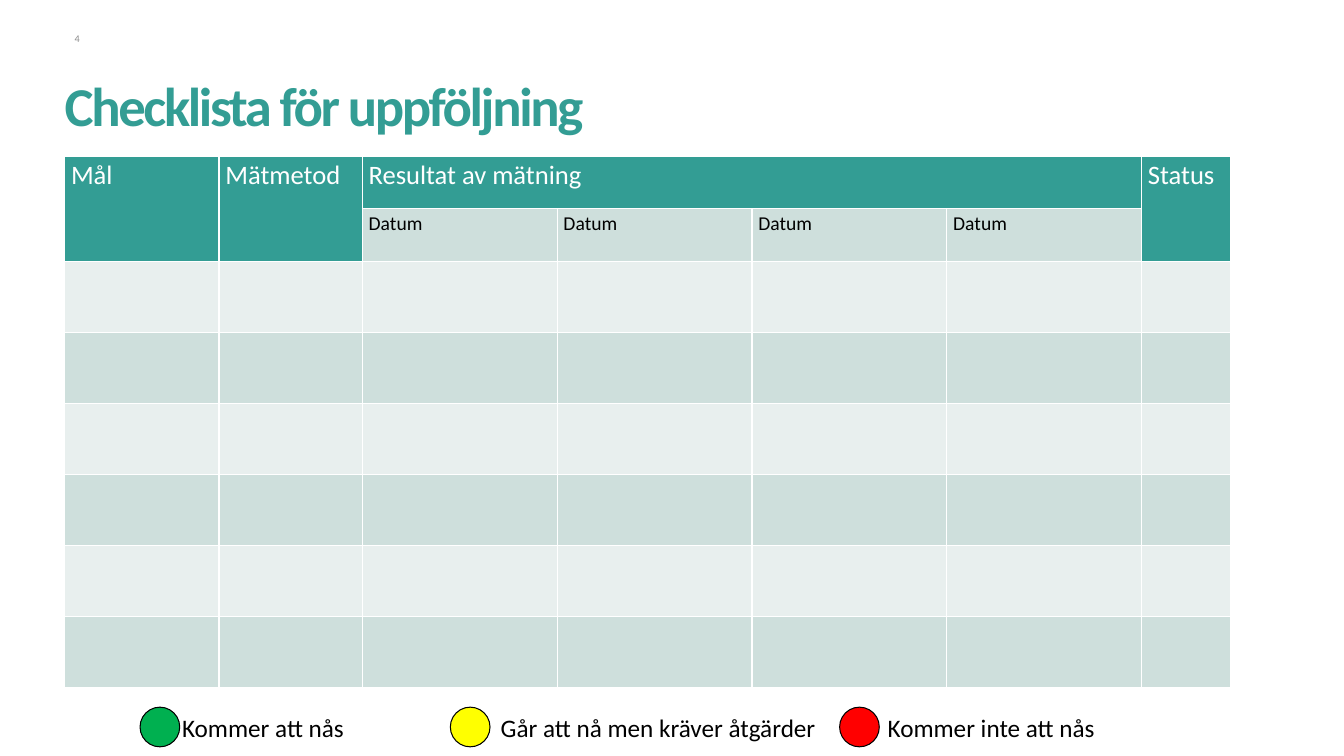
from lxml import etree
from pptx import Presentation
from pptx import util as u
from pptx.dml.color import RGBColor
from pptx.enum import shapes, text
from pptx.oxml import ns

TEAL = RGBColor(0x33, 0x9D, 0x94)
MID = RGBColor(0xCE, 0xDF, 0xDC)
PALE = RGBColor(0xE8, 0xEF, 0xEE)
GREY = RGBColor(0x8C, 0x8C, 0x8C)
WHITE = RGBColor(0xFF, 0xFF, 0xFF)
BLACK = RGBColor(0, 0, 0)
GREEN = RGBColor(0, 0xB0, 0x50)
YELLOW = RGBColor(0xFF, 0xFF, 0)
RED = RGBColor(0xFF, 0, 0)

COLS = [3.89, 3.61] + [4.91] * 4 + [2.24]
ROWS = [1.32] * 2 + [1.79] * 6
HEADS = {0: "Mål", 1: "Mätmetod", 2: "Resultat av mätning", 6: "Status"}
# Dot left, label left, label width, dot colour, label
STATUS = [
    (3.53, 4.34, 7.1, GREEN, "Kommer att nås"),
    (11.35, 12.37, 8.87, YELLOW, "Går att nå men kräver åtgärder"),
    (21.16, 22.12, 9.32, RED, "Kommer inte att nås"),
]


def box(*at):
    return [u.Cm(n) for n in at]


def write(frame, words, size, color, bold=False):
    para = frame.paragraphs[0]
    run = para.add_run()
    run.text = words
    look = {"name": "Calibri", "size": u.Pt(size), "bold": bold}
    for key, val in look.items():
        setattr(run.font, key, val)
    run.font.color.rgb = color
    return para, run


def inset(item, left, top, right, base):
    sides = {"left": left, "top": top, "right": right, "bottom": base}
    for side, size in sides.items():
        setattr(item, "margin_" + side, u.Cm(size))


def title(slide, words):
    head = slide.shapes.title
    head.left, head.top, head.width, head.height = box(1.63, 2.06, 30.15, 3.45)
    frame = head.text_frame
    inset(frame, 0, 0, 0, 0.2)
    form = {"word_wrap": True, "auto_size": text.MSO_AUTO_SIZE.NONE,
            "vertical_anchor": text.MSO_ANCHOR.TOP}
    for key, val in form.items():
        setattr(frame, key, val)
    para, run = write(frame, words, 39.1, TEAL, True)
    para.alignment = text.PP_ALIGN.LEFT
    para.line_spacing = 0.85
    run.font._element.set("spc", "-170")


def label(slide, at, words, size, color):
    frame = slide.shapes.add_textbox(*box(*at)).text_frame
    frame.word_wrap = True
    para, _ = write(frame, words, size, color)
    return frame, para


def dot(slide, left, top, color):
    ring = slide.shapes.add_shape(
        shapes.MSO_SHAPE.OVAL, *box(left, top, 1, 1))
    ring.shadow.inherit = False
    ring.fill.solid()
    ring.fill.fore_color.rgb = color
    ring.line.color.rgb = BLACK
    ring.line.width = u.Pt(0.75)


def paint(cell, color):
    props = cell._tc.get_or_add_tcPr()
    for side in ("lnL", "lnR", "lnT", "lnB"):
        line = etree.SubElement(props, ns.qn("a:" + side), w=str(u.Pt(1)))
        fill = etree.SubElement(line, ns.qn("a:solidFill"))
        etree.SubElement(fill, ns.qn("a:srgbClr"), val=str(WHITE))
    cell.fill.solid()
    cell.fill.fore_color.rgb = color
    inset(cell, 0.16, 0.08, 0.16, 0.08)


def grid(slide):
    table = slide.shapes.add_table(
        len(ROWS), len(COLS),
        *box(1.63, 3.94, sum(COLS), sum(ROWS))).table
    table.first_row = table.horz_banding = False
    for col, wide in zip(table.columns, COLS):
        col.width = u.Cm(wide)
    for row, high in zip(table.rows, ROWS):
        row.height = u.Cm(high)

    # Header fills, then alternating bands
    for r in range(len(ROWS)):
        for c in range(len(COLS)):
            head = r == 0 or (r == 1 and c in HEADS and c != 2)
            paint(table.cell(r, c), TEAL if head else MID if r % 2 else PALE)

    # Header spans and wording
    for c, words in HEADS.items():
        cell = table.cell(0, c)
        cell.merge(table.cell(0, 5) if c == 2 else table.cell(1, c))
        write(cell.text_frame, words, 19, WHITE)
    for c in range(2, 6):
        write(table.cell(1, c).text_frame, "Datum", 14, BLACK)


def main():
    deck = Presentation()
    deck.slide_width, deck.slide_height = box(33.87, 19.05)
    slide = deck.slides.add_slide(deck.slide_layouts[5])

    # Page number and title
    frame, para = label(slide, (1.4, 0.81, 0.61, 0.3), "4", 7.3, GREY)
    inset(frame, 0, 0, 0, 0)
    para.alignment = text.PP_ALIGN.RIGHT
    title(slide, "Checklista för uppföljning")

    # Follow-up table
    grid(slide)

    # Status key
    for left, start, wide, color, words in STATUS:
        label(slide, (start, 17.82, wide, 1.02), words, 18, BLACK)
        dot(slide, left, 17.82, color)

    deck.save("out.pptx")


if __name__ == "__main__":
    main()
